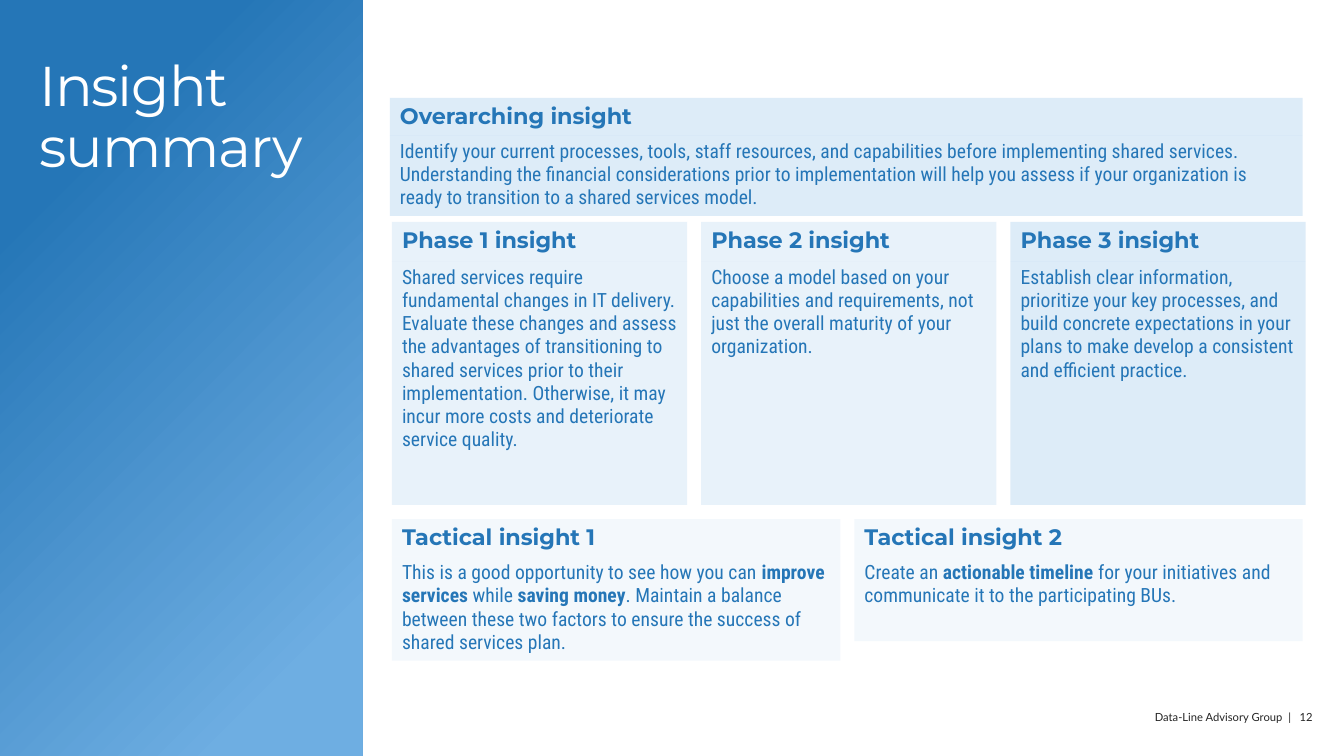
from lxml import etree
from pptx import Presentation
from pptx.dml.color import RGBColor
from pptx.enum import shapes, text
from pptx.oxml.ns import qn
from pptx.util import Inches, Pt


class Theme:
    blue, sky, white, ink = "2576B7", "6EAEE2", "FFFFFF", "242424"
    strong, medium, light = "6EAEE2", "9FC9EB", "CFE4F5"
    tint = 23  # opacity of the cards, percent
    title, heading, body, footer = ("Montserrat", 40), ("Montserrat", 16), ("Roboto Condensed", 14), ("Lato", 8)
    no_grid = "{2D5ABB26-0587-4C30-8999-92F81FD0307C}"


# Content: each card is (heading, body, fill, body height); ** marks bold
TITLE = "Insight summary"
FOOTER = ("Data-Line Advisory Group", " | ", "12")
OVERARCHING = [
    ("Overarching insight",
     "Identify your current processes, tools, staff resources, and capabilities before implementing "
     "shared services. Understanding the financial considerations prior to implementation will help you "
     "assess if your organization is ready to transition to a shared services model.", Theme.strong, 0.8),
]
PHASES = [
    ("Phase 1 insight",
     "Shared services require fundamental changes in IT delivery. Evaluate these changes and assess the "
     "advantages of transitioning to shared services prior to their implementation. Otherwise, it may "
     "incur more costs and deteriorate service quality.", Theme.medium, 2.42),
    ("Phase 2 insight",
     "Choose a model based on your capabilities and requirements, not just the overall maturity of your "
     "organization.", Theme.medium, 2.42),
    ("Phase 3 insight",
     "Establish clear information, prioritize your key processes, and build concrete expectations in your "
     "plans to make develop a consistent and efficient practice.", Theme.strong, 2.42),
]
TACTICS = [
    ("Tactical insight 1",
     "This is a good opportunity to see how you can **improve services** while **saving money**. Maintain "
     "a balance between these two factors to ensure the success of shared services plan.", Theme.light, 1.02),
    ("Tactical insight 2",
     "Create an **actionable timeline **for your initiatives and communicate it to the participating BUs.",
     Theme.light, 0.84),
]
# Bands of cards: (cards, left, top, card width, gap, heading height)
BANDS = [
    (OVERARCHING, 3.87, 0.97, 9.06, 0, 0.37),
    (PHASES, 3.89, 2.2, 2.93, 0.14, 0.39),
    (TACTICS, 3.89, 5.15, 4.45, 0.14, 0.37),
]


def style(p, face, color, bold=False):
    p.font.name, p.font.size = face[0], Pt(face[1])
    p.font.color.rgb = RGBColor.from_string(color)
    p.font.bold = bold


def add_run(p, words, spacing=0):
    r = p.add_run()
    r.text = words
    if spacing:
        r._r.get_or_add_rPr().set("spc", str(round(spacing * 100)))
    return r


def add_text(slide, left, top, width, height):
    tf = slide.shapes.add_textbox(*map(Inches, (left, top, width, height))).text_frame
    tf.word_wrap = True
    tf.margin_left = tf.margin_top = tf.margin_right = tf.margin_bottom = 0
    return tf.paragraphs[0]


def tint_cell(cell, color):
    cell.fill.solid()
    cell.fill.fore_color.rgb = RGBColor.from_string(color)
    clr = cell._tc.tcPr.find(".//" + qn("a:srgbClr"))
    etree.SubElement(clr, qn("a:alpha")).set("val", str(Theme.tint * 1000))


def add_card(slide, card, left, top, width, head_height):
    heading, body, fill, body_height = card
    frame = slide.shapes.add_table(2, 1, *map(Inches, (left, top, width, head_height + body_height)))
    table = frame.table
    table.first_row = table.horz_banding = False
    table._tbl.tblPr.find(qn("a:tableStyleId")).text = Theme.no_grid
    rows = [(heading, Theme.heading, True, head_height), (body, Theme.body, False, body_height)]
    for i, (words, face, bold, height) in enumerate(rows):
        table.rows[i].height = Inches(height)
        cell = table.cell(i, 0)
        tint_cell(cell, fill)
        p = cell.text_frame.paragraphs[0]
        style(p, face, Theme.blue, bold)
        for j, part in enumerate(words.split("**")):
            r = add_run(p, part)
            if j % 2:
                r.font.bold = True


def main():
    prs = Presentation()
    prs.slide_width, prs.slide_height = Inches(13.34), Inches(7.5)
    slide = prs.slides.add_slide(prs.slide_layouts[6])

    # Side panel
    panel = slide.shapes.add_shape(shapes.MSO_SHAPE.RECTANGLE, 0, 0, Inches(3.6), prs.slide_height)
    panel.shadow.inherit = False
    panel.line.fill.background()
    panel.fill.gradient()
    panel.fill.gradient_angle = 315
    for stop, (pos, color) in zip(panel.fill.gradient_stops, [(0.21, Theme.blue), (0.87, Theme.sky)]):
        stop.position = pos
        stop.color.rgb = RGBColor.from_string(color)

    # Title
    p = add_text(slide, 0.39, 0.58, 2.89, 1.27)
    style(p, Theme.title, Theme.white)
    p.line_spacing = 0.9
    add_run(p, TITLE, -0.8)

    # Insight cards
    for cards, left, top, width, gap, head_height in BANDS:
        for i, card in enumerate(cards):
            add_card(slide, card, left + i * (width + gap), top, width, head_height)

    # Footer
    p = add_text(slide, 9.27, 7.05, 3.76, 0.13)
    style(p, Theme.footer, Theme.ink)
    p.alignment = text.PP_ALIGN.RIGHT
    for words, spacing in zip(FOOTER, (0, 2, 0)):
        add_run(p, words, spacing)

    prs.save("out.pptx")


if __name__ == "__main__":
    main()
